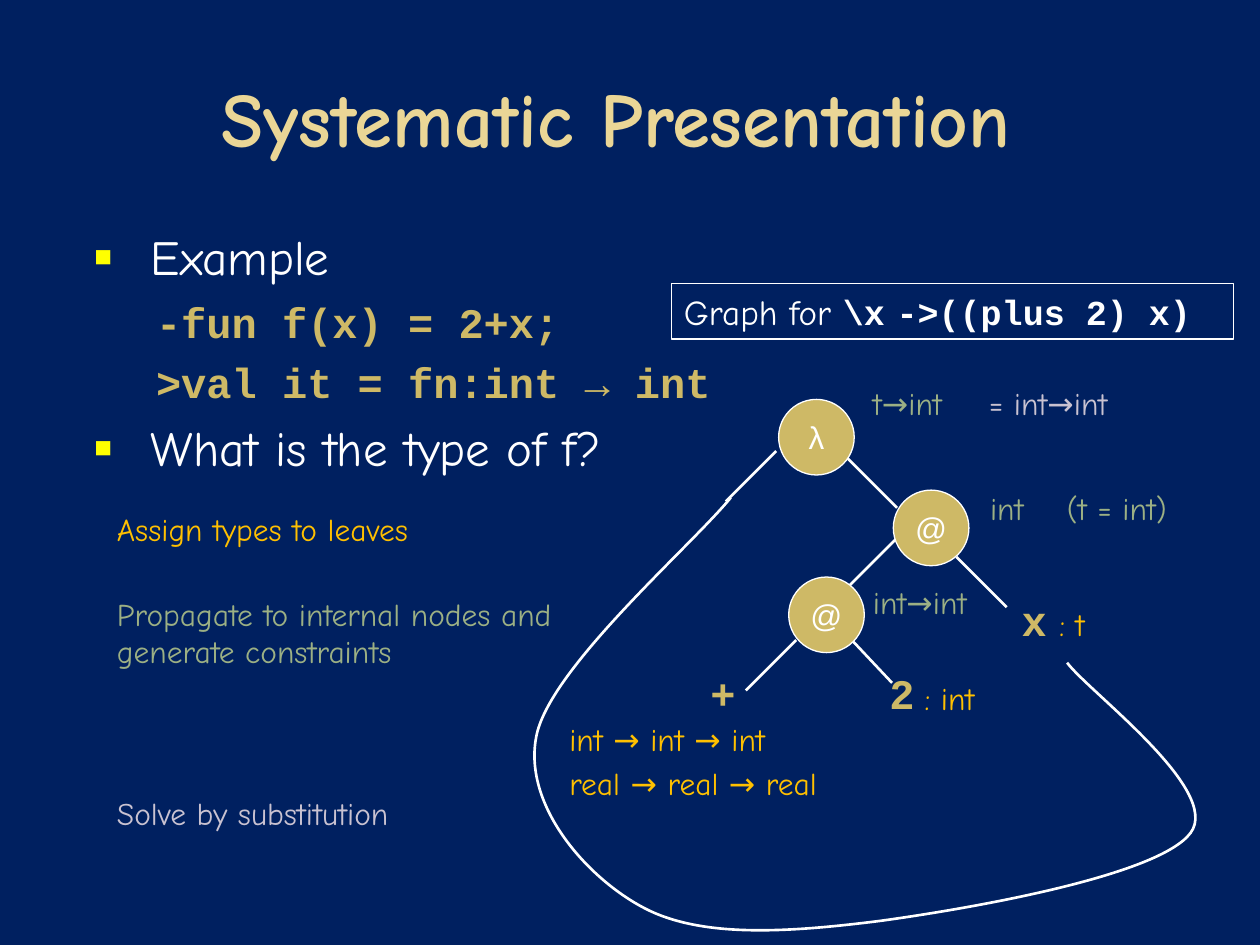
from lxml import etree
from pptx import Presentation
from pptx.dml.color import RGBColor
from pptx.enum.shapes import MSO_CONNECTOR, MSO_SHAPE
from pptx.enum.text import MSO_ANCHOR, PP_ALIGN
from pptx.oxml.ns import qn
from pptx.util import Emu, Inches, Pt

OVAL, RECT = MSO_SHAPE.OVAL, MSO_SHAPE.RECTANGLE
STRAIGHT = MSO_CONNECTOR.STRAIGHT
MIDDLE, CENTER = MSO_ANCHOR.MIDDLE, PP_ALIGN.CENTER

NAVY = RGBColor(0x00, 0x20, 0x60)
CREAM = RGBColor(0xEA, 0xD6, 0x96)
GOLD = RGBColor(0xCE, 0xB9, 0x66)
WHITE = RGBColor(0xFF, 0xFF, 0xFF)
AMBER = RGBColor(0xFF, 0xC0, 0x00)
GREEN = RGBColor(0x9C, 0xB0, 0x84)
LILAC = RGBColor(0xC9, 0xC2, 0xD1)
BULLET_COLOR = "FFFF00"
HAND, CODE, PLAIN = "Comic Neue", "Courier New", "Arial"

TITLE = "Systematic Presentation "
# (text, is code)
BODY = [
    ("Example", False),
    ("-fun f(x) = 2+x;", True),
    (">val it = fn:int → int", True),
    ("What is the type of f?", False),
]
GRAPH_CAPTION = [("Graph for ", HAND, False), ("\\x", CODE, True),
                 (" ", HAND, False), ("->((plus 2) x)", CODE, True)]

NODE_SIZE = 0.6
NODES = [("λ", 6.18, 3.17), ("@", 7.09, 3.89), ("@", 6.26, 4.58)]
LEAVES = [("x", 8.01, 4.67), ("+", 5.54, 5.25), ("2", 6.96, 5.25)]
EDGES = [  # start x, y, end x, y
    (6.72, 3.63, 7.12, 4.03),
    (7.59, 4.42, 7.99, 4.82),
    (7.12, 4.27, 6.72, 4.67),
    (6.32, 5.08, 5.92, 5.48),
    (6.16, 3.58, 5.76, 3.98),
    (6.77, 5.09, 7.08, 5.42),
]
# Bezier curve binding leaf x to the lambda: start, then three points a segment
BINDING = [
    (8.47, 5.26),
    (8.64, 5.49), (9.7, 6.27), (9.45, 6.61),
    (9.2, 6.95), (7.71, 7.21), (6.98, 7.31),
    (6.26, 7.4), (5.56, 7.45), (5.1, 7.2),
    (4.65, 6.96), (4.14, 6.38), (4.26, 5.83),
    (4.38, 5.29), (5.48, 4.34), (5.8, 3.95),
]
# Each step of the inference has its colour: (lines, left, top, width, height)
STEPS = {
    AMBER: [
        (["Assign types to leaves"], 0.83, 4, 3.67, 0.4),
        ([": t"], 8.31, 4.75, 0.52, 0.4),
        (["int → int → int", "real → real → real"], 4.42, 5.75, 2.83, 0.69),
        ([": int"], 7.24, 5.34, 0.71, 0.4),
    ],
    GREEN: [
        (["Propagate to internal nodes and generate constraints"],
         0.83, 4.67, 4.25, 0.71),
        (["int\t(t = int)"], 7.76, 3.83, 1.83, 0.4),
        (["int→int"], 6.83, 4.58, 1.83, 0.4),
        (["t→int"], 6.83, 3, 1.17, 0.4),
    ],
    LILAC: [
        (["Solve by substitution"], 0.83, 6.25, 3.67, 0.4),
        (["= int→int"], 7.75, 3, 1.83, 0.4),
    ],
}


def inches(*values):
    return [Inches(v) for v in values]


def add_run(p, text, font, size, color, bold=False):
    r = p.add_run()
    r.text = text
    r.font.name, r.font.size, r.font.bold = font, Pt(size), bold
    r.font.color.rgb = color


def add_text_frame(slide, *box):
    tf = slide.shapes.add_textbox(*inches(*box)).text_frame
    tf.word_wrap = True
    return tf


def next_paragraph(tf, index):
    return tf.add_paragraph() if index else tf.paragraphs[0]


def outline(sp, width):
    sp.line.color.rgb = WHITE
    sp.line.width = Pt(width)


def set_indent(p, left, first):
    pPr = p._p.get_or_add_pPr()
    pPr.set("marL", str(Inches(left)))
    pPr.set("indent", str(Inches(first)))
    return pPr


def add_bullet(pPr):
    color = etree.SubElement(pPr, qn("a:buClr"))
    etree.SubElement(color, qn("a:srgbClr"), val=BULLET_COLOR)
    etree.SubElement(pPr, qn("a:buSzPct"), val="60000")
    etree.SubElement(pPr, qn("a:buFont"), typeface=PLAIN)
    etree.SubElement(pPr, qn("a:buChar"), char="■")


def add_tab_stop(p, position):
    tabs = etree.SubElement(p._p.get_or_add_pPr(), qn("a:tabLst"))
    etree.SubElement(tabs, qn("a:tab"), pos=str(Inches(position)), algn="l")


def add_body(slide):
    tf = add_text_frame(slide, 0.5, 1.75, 8.94, 2.17)
    for i, (text, is_code) in enumerate(BODY):
        p = next_paragraph(tf, i)
        p.space_before = Pt(6 if i else 0)
        if is_code:
            set_indent(p, 0.95, -0.31)
            add_run(p, text, CODE, 24, GOLD, True)
        else:
            add_bullet(set_indent(p, 0.6, -0.45))
            add_run(p, text, HAND, 28, WHITE)


def add_edge(slide, *ends):
    line = slide.shapes.add_connector(STRAIGHT, *inches(*ends))
    outline(line, 1.5)
    etree.SubElement(line._element.spPr, qn("a:effectLst"))


def add_curve(slide, points):
    """Build a freeform through all points, then join each three as a Bezier."""
    start, *rest = [inches(*pt) for pt in points]
    builder = slide.shapes.build_freeform(*start)
    builder.add_line_segments(rest, close=False)
    sp = builder.convert_to_shape()
    outline(sp, 1.5)
    sp.fill.background()
    sp.shadow.inherit = False
    lines = list(sp._element.iter(qn("a:lnTo")))
    for i in range(0, len(lines), 3):
        curve = etree.Element(qn("a:cubicBezTo"))
        lines[i].addprevious(curve)
        for ln in lines[i:i + 3]:
            curve.append(ln[0])
            ln.getparent().remove(ln)


def add_node(slide, label, x, y):
    sp = slide.shapes.add_shape(OVAL, *inches(x, y, NODE_SIZE, NODE_SIZE))
    sp.shadow.inherit = False
    sp.fill.solid()
    sp.fill.fore_color.rgb = GOLD
    outline(sp, 0.75)
    tf = sp.text_frame
    tf.word_wrap, tf.vertical_anchor = False, MIDDLE
    tf.paragraphs[0].alignment = CENTER
    add_run(tf.paragraphs[0], label, PLAIN, 18, WHITE)


def add_caption(slide):
    sp = slide.shapes.add_shape(RECT, *inches(5.33, 2.25, 4.46, 0.44))
    sp.shadow.inherit = False
    sp.fill.background()
    outline(sp, 0.75)
    p = sp.text_frame.paragraphs[0]
    p.alignment = PP_ALIGN.LEFT
    for text, font, bold in GRAPH_CAPTION:
        add_run(p, text, font, 20, WHITE, bold)


def add_note(slide, lines, color, *box):
    tf = add_text_frame(slide, *box)
    for i, text in enumerate(lines):
        p = next_paragraph(tf, i)
        if len(lines) > 1:
            p.line_spacing = 0.7
            p.space_before = Pt(10 if i else 0)
        if "\t" in text:
            add_tab_stop(p, 0.61)
        add_run(p, text, HAND, 18, color)


def main():
    prs = Presentation()
    prs.slide_width, prs.slide_height = inches(10, 7.5)
    slide = prs.slides.add_slide(prs.slide_layouts[6])
    slide.background.fill.solid()
    slide.background.fill.fore_color.rgb = NAVY

    tf = add_text_frame(slide, 0.5, 0.3, 9, 1.25)
    tf.vertical_anchor = MIDDLE
    tf.paragraphs[0].alignment = CENTER
    add_run(tf.paragraphs[0], TITLE, HAND, 44, CREAM, True)
    add_body(slide)

    for edge in EDGES:
        add_edge(slide, *edge)
    add_curve(slide, BINDING)
    for node in NODES:
        add_node(slide, *node)
    for text, x, y in LEAVES:
        leaf = add_text_frame(slide, x, y, 0.5, 0.51)
        add_run(leaf.paragraphs[0], text, CODE, 24, GOLD, True)
    for color, notes in STEPS.items():
        for lines, *box in notes:
            add_note(slide, lines, color, *box)
    add_caption(slide)
    prs.save("out.pptx")


if __name__ == "__main__":
    main()
